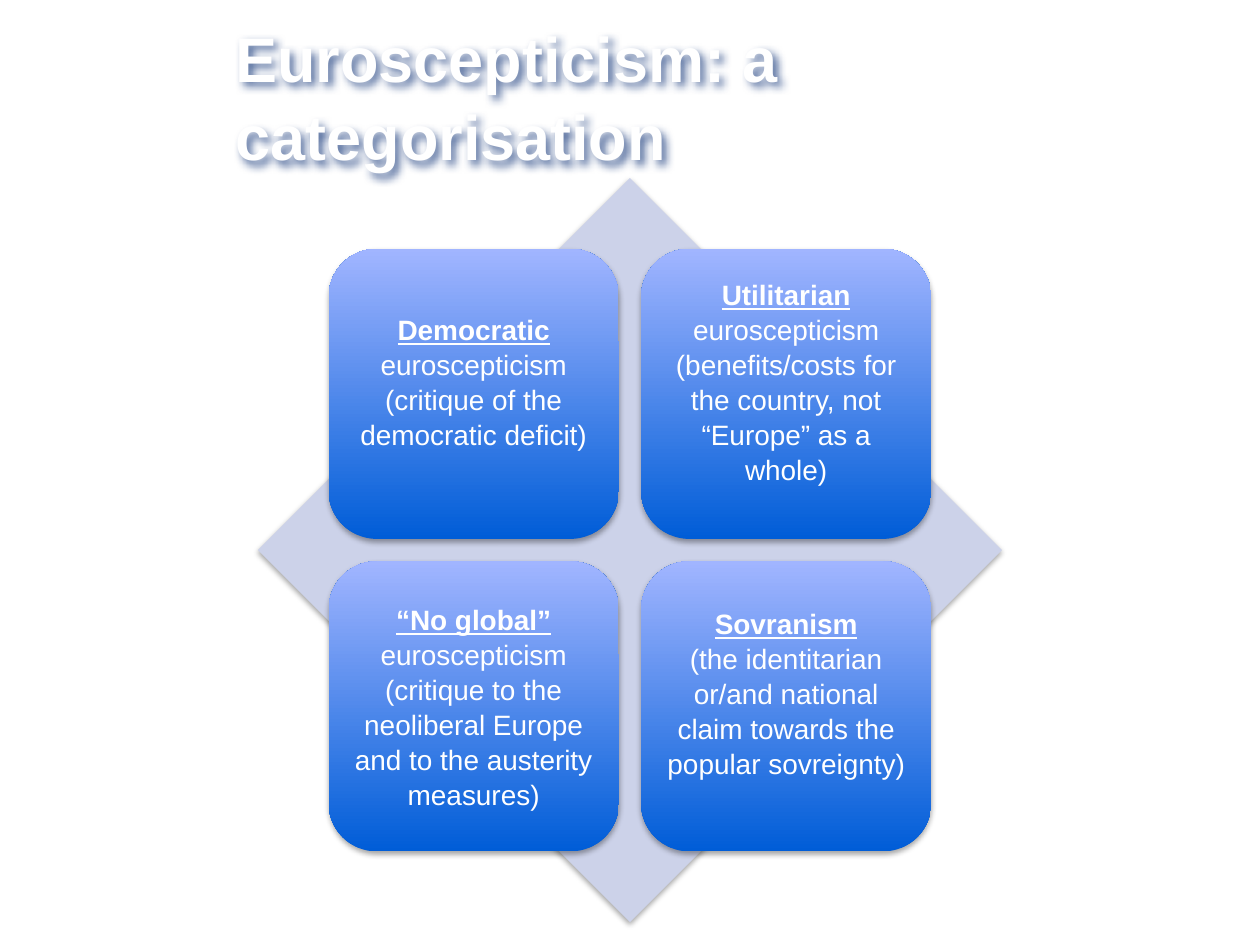
from lxml import etree
from pptx import Presentation
from pptx.dml.color import RGBColor
from pptx.enum.shapes import MSO_SHAPE
from pptx.enum.text import MSO_ANCHOR, PP_ALIGN
from pptx.oxml.ns import qn
from pptx.util import Cm, Pt

DIAMOND = MSO_SHAPE.DIAMOND
ROUNDED = MSO_SHAPE.ROUNDED_RECTANGLE
MIDDLE = MSO_ANCHOR.MIDDLE
LEFT, CENTER = PP_ALIGN.LEFT, PP_ALIGN.CENTER

WHITE = RGBColor(0xFF, 0xFF, 0xFF)
PALE_BLUE = RGBColor(0xCC, 0xD2, 0xE9)
DEEP_BLUE = RGBColor(0x00, 0x5D, 0xD7)
LIGHT_BLUE = RGBColor(0xA1, 0xB5, 0xFF)
BLACK = RGBColor(0x00, 0x00, 0x00)
NAVY = RGBColor(0x1F, 0x40, 0x80)

FONT = "Arial"
LINE_SPACING = 1.04

# Heading, rest of the first line, explanation, room kept free below the text (cm)
CATEGORIES = [
    ("Democratic", " euroscepticism", "(critique of the democratic deficit)", 0.5),
    ("Utilitarian", " euroscepticism",
     "(benefits/costs for the country, not “Europe” as a whole)", 0.5),
    ("“No global”", " euroscepticism",
     "(critique to the neoliberal Europe and to the austerity measures)", 0),
    ("Sovranism", "",
     "(the identitarian or/and national claim towards the popular sovreignty)", 0.55),
]


def add_shadow(shape, color, opacity, blur, distance, angle):
    shape.shadow.inherit = False
    effects = shape._element.spPr.find(qn("a:effectLst"))
    outer = etree.SubElement(
        effects, qn("a:outerShdw"), blurRad=str(Pt(blur)), dist=str(Pt(distance)),
        dir=str(angle * 60000), rotWithShape="0")
    tint = etree.SubElement(outer, qn("a:srgbClr"), val=str(color))
    etree.SubElement(tint, qn("a:alpha"), val=str(opacity * 1000))


def add_run(paragraph, text, size=16, bold=False, underline=False):
    run = paragraph.add_run()
    run.text = text
    run.font.name = FONT
    run.font.size = Pt(size)
    run.font.bold = bold
    run.font.underline = underline
    run.font.color.rgb = WHITE


def format_paragraph(paragraph, align):
    paragraph.alignment = align
    paragraph.line_spacing = LINE_SPACING


def add_title(slide, left, top, width, height):
    title = slide.shapes.add_textbox(Cm(left), Cm(top), Cm(width), Cm(height))
    add_shadow(title, NAVY, 75, blur=5, distance=2.5, angle=50)
    frame = title.text_frame
    frame.word_wrap = True
    frame.vertical_anchor = MIDDLE
    paragraph = frame.paragraphs[0]
    format_paragraph(paragraph, LEFT)
    add_run(paragraph, "Euroscepticism: a categorisation", size=36, bold=True)


def add_tile(slide, left, top, side, category):
    heading, subject, explanation, space_below = category
    tile = slide.shapes.add_shape(ROUNDED, Cm(left), Cm(top), Cm(side), Cm(side))
    add_shadow(tile, BLACK, 35, blur=3.1, distance=1.8, angle=90)
    tile.line.fill.background()

    # Dark at the bottom, light at the top
    tile.fill.gradient()
    tile.fill.gradient_angle = 90
    for stop, color in zip(tile.fill.gradient_stops, (DEEP_BLUE, LIGHT_BLUE)):
        stop.color.rgb = color

    frame = tile.text_frame
    frame.word_wrap = True
    frame.vertical_anchor = MIDDLE
    frame.margin_left = frame.margin_right = frame.margin_top = Cm(0.18)
    frame.margin_bottom = Cm(0.18 + space_below)
    first, second = frame.paragraphs[0], frame.add_paragraph()
    for paragraph in (first, second):
        format_paragraph(paragraph, CENTER)
    add_run(first, heading, bold=True, underline=True)
    if subject:
        add_run(first, subject)
    add_run(second, explanation)


def add_matrix(slide, left, top, side):
    # Diamond behind the tiles
    diamond = slide.shapes.add_shape(DIAMOND, Cm(left), Cm(top), Cm(side), Cm(side))
    add_shadow(diamond, BLACK, 35, blur=3.1, distance=1.8, angle=90)
    diamond.fill.solid()
    diamond.fill.fore_color.rgb = PALE_BLUE
    diamond.line.fill.background()

    # Two by two tiles, centred on the diamond
    margin, tile_side, step = 0.095 * side, 0.39 * side, 0.42 * side
    for index, category in enumerate(CATEGORIES):
        row, column = divmod(index, 2)
        add_tile(slide, left + margin + column * step, top + margin + row * step,
                 tile_side, category)


def main():
    deck = Presentation()
    deck.slide_width, deck.slide_height = Cm(25.4), Cm(19.05)
    slide = deck.slides.add_slide(deck.slide_layouts[6])
    add_title(slide, 4.5, 0.91, 19.6, 2)
    add_matrix(slide, 5.2, 3.59, 15)
    deck.save("out.pptx")


if __name__ == "__main__":
    main()
